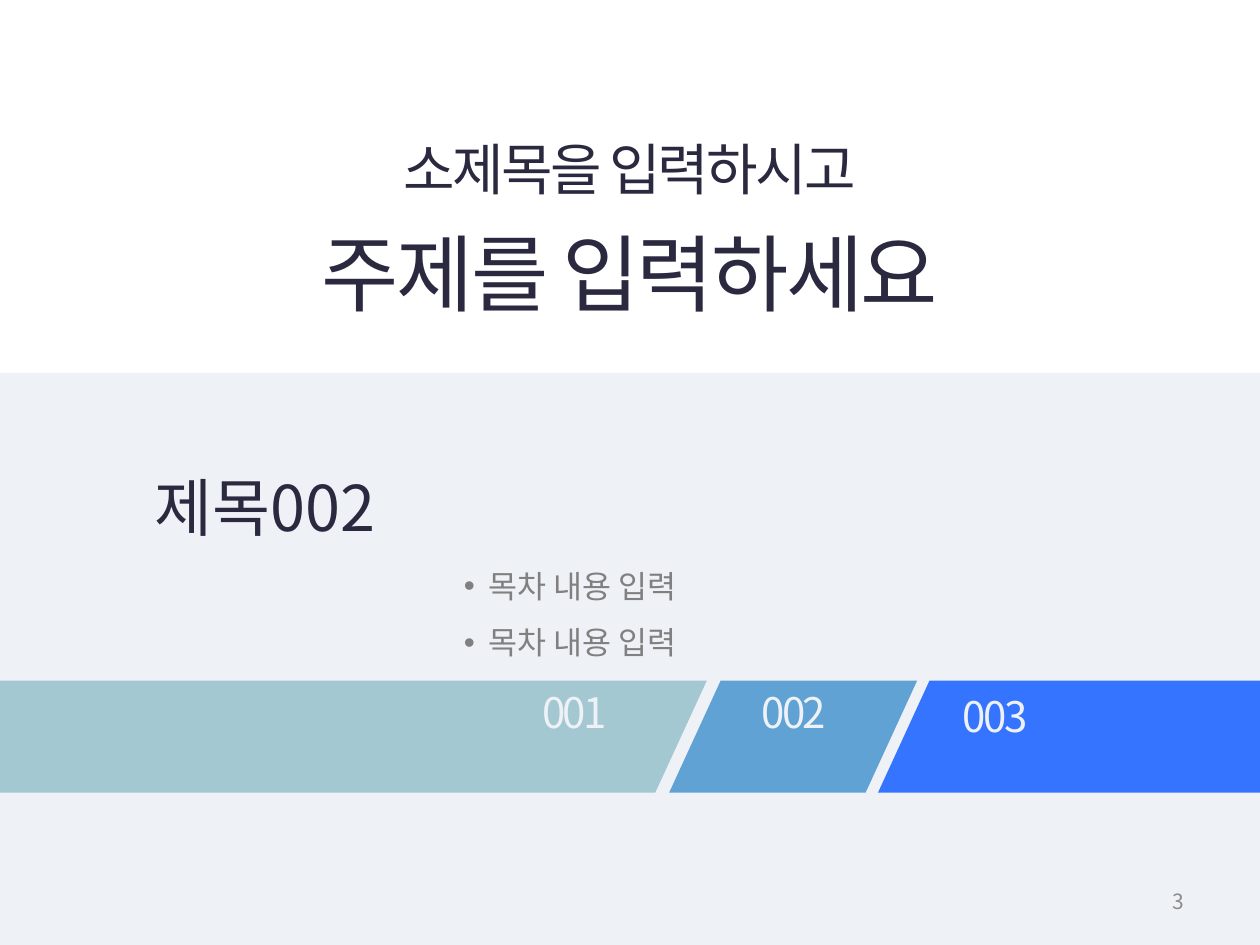
from lxml.etree import SubElement
from pptx import Presentation
from pptx.dml.color import RGBColor
from pptx.enum.shapes import MSO_SHAPE
from pptx.enum.text import MSO_ANCHOR, MSO_AUTO_SIZE, PP_ALIGN
from pptx.oxml.ns import qn
from pptx.util import Cm, Pt

FONT = "Noto Sans CJK KR"
COLORS = {
    "panel": "EEF1F6", "ink": "2B293F", "body": "808080", "number": "8C8C8C",
    "teal": "A3C8D1", "sky": "60A2D4", "blue": "3574FF",
}
WIDTH, HEIGHT = 25.4, 19.05
SLANT = 1.04


def paint(sp, color):
    sp.shadow.inherit = False
    sp.fill.solid()
    sp.fill.fore_color.rgb = RGBColor.from_string(COLORS[color])
    sp.line.fill.background()


def add_run(p, text, size, color, spacing=None):
    r = p.add_run()
    r.text = text
    formats = {"name": FONT, "size": Pt(size)}
    for name, value in formats.items():
        setattr(r.font, name, value)
    r.font.color.rgb = RGBColor.from_string(COLORS[color])
    rPr = r.font._element
    SubElement(rPr, qn("a:ea")).set("typeface", FONT)
    if spacing is not None:
        rPr.set("spc", str(int(spacing * 100)))


def add_text(s, box, lines, color, spacing=None, para=None, frame=None):
    """Add a text box; lines holds (text, size) pairs, one per paragraph."""
    tf = s.shapes.add_textbox(*map(Cm, box)).text_frame
    formats = {"word_wrap": True, "auto_size": MSO_AUTO_SIZE.SHAPE_TO_FIT_TEXT}
    for name, value in (formats | (frame or {})).items():
        setattr(tf, name, value)
    for i, (text, size) in enumerate(lines):
        p = tf.add_paragraph() if i else tf.paragraphs[0]
        for name, value in (para or {}).items():
            setattr(p, name, value)
        add_run(p, text, size, color, spacing)
    return tf


def add_bullet(p, indent):
    pPr = p._p.get_or_add_pPr()
    pPr.set("marL", str(Cm(indent)))
    pPr.set("indent", str(-Cm(indent)))
    SubElement(pPr, qn("a:buFont")).set("typeface", "Arial")
    SubElement(pPr, qn("a:buChar")).set("char", "•")


def add_heading(s, box):
    lines = [("소제목을 입력하시고", 32), ("주제를 입력하세요", 48)]
    add_text(s, box, lines, "ink", -1.5,
             {"alignment": PP_ALIGN.CENTER, "line_spacing": 1.2})


def add_contents(s, box):
    """Panel with a section title, its bullets and the page number."""
    x, y, w, h = box
    paint(s.shapes.add_shape(MSO_SHAPE.RECTANGLE, *map(Cm, box)), "panel")
    add_text(s, (x + w - 7.19, y + h - 1.4, 5.92, 1.02), [("3", 12)], "number",
             para={"alignment": PP_ALIGN.RIGHT},
             frame={"vertical_anchor": MSO_ANCHOR.MIDDLE,
                    "auto_size": MSO_AUTO_SIZE.NONE})
    add_text(s, (x + 2.87, y + 1.8, 7.72, 1.8), [("제목002", 36)], "ink")
    tf = add_text(s, (x + 9.1, y + 3.4, 15.03, 2.44),
                  [("목차 내용 입력", 18)] * 2, "body", para={"line_spacing": 1.5})
    for p in tf.paragraphs:
        add_bullet(p, 0.5)


def add_edge_band(s, box, left_slant, right_slant):
    """Outline a band whose sides lean only where a slant is given."""
    x, y, w, h = box
    points = [(x + left_slant, y), (x + w, y),
              (x + w - right_slant, y + h), (x, y + h)]
    points = [(Cm(px), Cm(py)) for px, py in points]
    builder = s.shapes.build_freeform(*points[0], scale=1.0)
    builder.add_line_segments(points[1:], close=True)
    return builder.convert_to_shape()


def add_middle_band(s, box):
    sp = s.shapes.add_shape(MSO_SHAPE.PARALLELOGRAM, *map(Cm, box))
    sp.adjustments[0] = SLANT / box[3]
    return sp


def add_steps(s, box):
    x, y, w, h = box
    bands = [
        (add_edge_band(s, (x, y, 14.25, h), 0, SLANT), "teal"),
        (add_middle_band(s, (x + 13.49, y, 5, h)), "sky"),
        (add_edge_band(s, (x + 17.7, y, w - 17.7, h), SLANT, 0), "blue"),
    ]
    for sp, color in bands:
        paint(sp, color)
    labels = [("001", 10.62, 0), ("002", 15.04, 0), ("003", 19.1, 0.08)]
    for text, dx, dy in labels:
        add_text(s, (x + dx, y + dy, 1.93, 1.27), [(text, 24)], "panel", -1.5,
                 {"alignment": PP_ALIGN.CENTER}, {"word_wrap": False})


def main():
    prs = Presentation()
    prs.slide_width, prs.slide_height = Cm(WIDTH), Cm(HEIGHT)
    s = prs.slides.add_slide(prs.slide_layouts[6])
    panel_top = 7.52
    add_contents(s, (0, panel_top, WIDTH, HEIGHT - panel_top))
    add_heading(s, (2.3, 2.31, WIDTH - 2 * 2.3, 4.17))
    add_steps(s, (0, 13.72, WIDTH, 2.26))
    prs.save("out.pptx")


if __name__ == "__main__":
    main()
